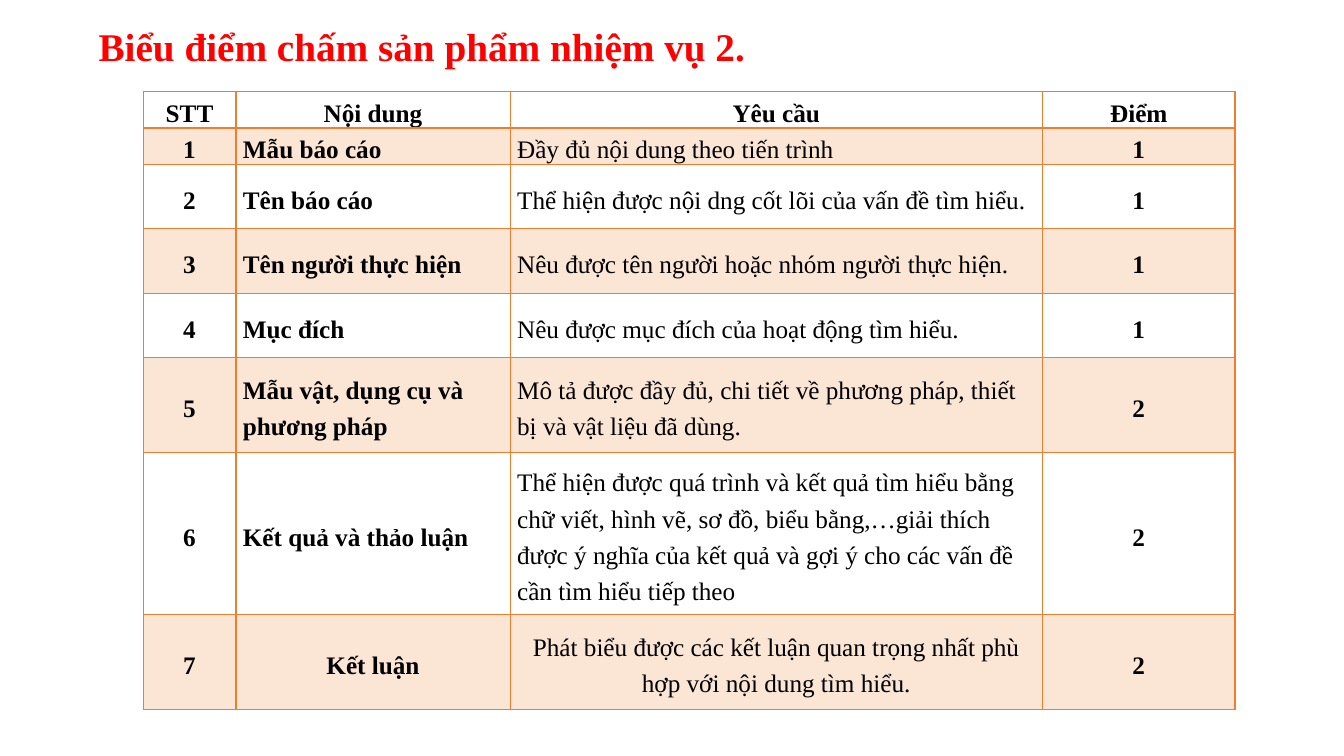
from dataclasses import dataclass

import pptx
import pptx.dml.color
import pptx.enum.text
import pptx.oxml
import pptx.oxml.ns
import pptx.table
import pptx.text.text
import pptx.util
from pptx.dml.color import RGBColor
from pptx.util import Inches

BLACK = RGBColor(0x00, 0x00, 0x00)
RED = RGBColor(0xFF, 0x00, 0x00)
ORANGE = RGBColor(0xED, 0x7D, 0x31)
FONT = "Times New Roman"
PLAIN_STYLE = "{2D5ABB26-0587-4C30-8999-92F81FD0307C}"
BAND_OPACITY = 20
CENTER = pptx.enum.text.PP_ALIGN.CENTER
LEFT = pptx.enum.text.PP_ALIGN.LEFT
MIDDLE = pptx.enum.text.MSO_ANCHOR.MIDDLE


@dataclass(frozen=True)
class Criterion:
    number: str
    content: str
    requirement: str
    points: str
    height: float
    centered: bool = False


HEADER = Criterion("STT", "Nội dung", "Yêu cầu", "Điểm", 0.34, True)
CRITERIA = [
    Criterion("1", "Mẫu báo cáo", "Đầy đủ nội dung theo tiến trình", "1", 0.34),
    Criterion("2", "Tên báo cáo", "Thể hiện được nội dng cốt lõi của vấn đề tìm hiểu.", "1", 0.64),
    Criterion("3", "Tên người thực hiện", "Nêu được tên người hoặc nhóm người thực hiện.", "1", 0.64),
    Criterion("4", "Mục đích", "Nêu được mục đích của hoạt động tìm hiểu.", "1", 0.64),
    Criterion(
        "5", "Mẫu vật, dụng cụ và phương pháp",
        "Mô tả được đầy đủ, chi tiết về phương pháp, thiết bị và vật liệu đã dùng.", "2", 0.94,
    ),
    Criterion(
        "6", "Kết quả và thảo luận",
        "Thể hiện được quá trình và kết quả tìm hiểu bằng chữ viết, hình vẽ, sơ đồ, "
        "biểu bằng,…giải thích được ý nghĩa của kết quả và gợi ý cho các vấn đề "
        "cần tìm hiểu tiếp theo", "2", 1.61,
    ),
    Criterion(
        "7", "Kết luận",
        "Phát biểu được các kết luận quan trọng nhất phù hợp với nội dung tìm hiểu.", "2", 0.94, True,
    ),
]
COLUMN_WIDTHS = [0.92, 2.72, 5.28, 1.91]


def add_run(paragraph: pptx.text.text._Paragraph, text: str, size: int, color: RGBColor, bold: bool) -> None:
    run = paragraph.add_run()
    run.text = text
    run.font.name = FONT
    run.font.size = pptx.util.Pt(size)
    run.font.bold = bold
    run.font.color.rgb = color


def draw_borders(cell: pptx.table._Cell, top: int, bottom: int) -> None:
    properties = cell._tc.get_or_add_tcPr()
    for side, width in (("L", 1), ("R", 1), ("T", top), ("B", bottom)):
        properties.append(pptx.oxml.parse_xml(
            f'<a:ln{side} {pptx.oxml.ns.nsdecls("a")} w="{pptx.util.Pt(width)}">'
            f'<a:solidFill><a:srgbClr val="{ORANGE}"/></a:solidFill></a:ln{side}>'
        ))


def fill_band(cell: pptx.table._Cell) -> None:
    cell.fill.solid()
    cell.fill.fore_color.rgb = ORANGE
    for color in cell._tc.tcPr.findall("a:solidFill/a:srgbClr", pptx.oxml.ns._nsmap):
        color.append(pptx.oxml.parse_xml(
            f'<a:alpha {pptx.oxml.ns.nsdecls("a")} val="{BAND_OPACITY * 1000}"/>'
        ))


def write_cell(cell: pptx.table._Cell, text: str, centered: bool, bold: bool) -> None:
    cell.vertical_anchor = MIDDLE
    cell.margin_left = cell.margin_right = Inches(0.07)
    cell.margin_top = cell.margin_bottom = 0
    paragraph = cell.text_frame.paragraphs[0]
    paragraph.alignment = CENTER if centered else LEFT
    paragraph.line_spacing = 1.3
    add_run(paragraph, text, 18, BLACK, bold)


def draw_criterion(rubric: pptx.table.Table, index: int, criterion: Criterion) -> None:
    rubric.rows[index].height = Inches(criterion.height)
    is_header = index == 0
    texts = (criterion.number, criterion.content, criterion.requirement, criterion.points)
    for column, text in enumerate(texts):
        cell = rubric.cell(index, column)
        write_cell(cell, text, criterion.centered or column in (0, 3), is_header or column != 2)
        draw_borders(cell, top=2 if index == 1 else 1, bottom=2 if is_header else 1)
        if index % 2:
            fill_band(cell)
        else:
            cell.fill.background()


def main() -> None:
    presentation = pptx.Presentation()
    presentation.slide_width = Inches(13.33)
    presentation.slide_height = Inches(7.5)
    slide = presentation.slides.add_slide(presentation.slide_layouts[6])

    rows = [HEADER, *CRITERIA]
    frame = slide.shapes.add_table(
        len(rows), len(COLUMN_WIDTHS), Inches(1.42), Inches(0.91),
        Inches(sum(COLUMN_WIDTHS)), Inches(sum(row.height for row in rows)),
    )
    for style in frame.element.iter(pptx.oxml.ns.qn("a:tableStyleId")):
        style.text = PLAIN_STYLE
    rubric = frame.table
    for column, width in zip(rubric.columns, COLUMN_WIDTHS):
        column.width = Inches(width)
    for index, criterion in enumerate(rows):
        draw_criterion(rubric, index, criterion)

    title = slide.shapes.add_textbox(Inches(0.88), Inches(0.17), Inches(10.35), Inches(0.57)).text_frame
    title.word_wrap = True
    title.auto_size = pptx.enum.text.MSO_AUTO_SIZE.SHAPE_TO_FIT_TEXT
    title.vertical_anchor = MIDDLE
    add_run(title.paragraphs[0], "Biểu điểm chấm sản phẩm nhiệm vụ 2.", 28, RED, True)

    presentation.save("out.pptx")


if __name__ == "__main__":
    main()
